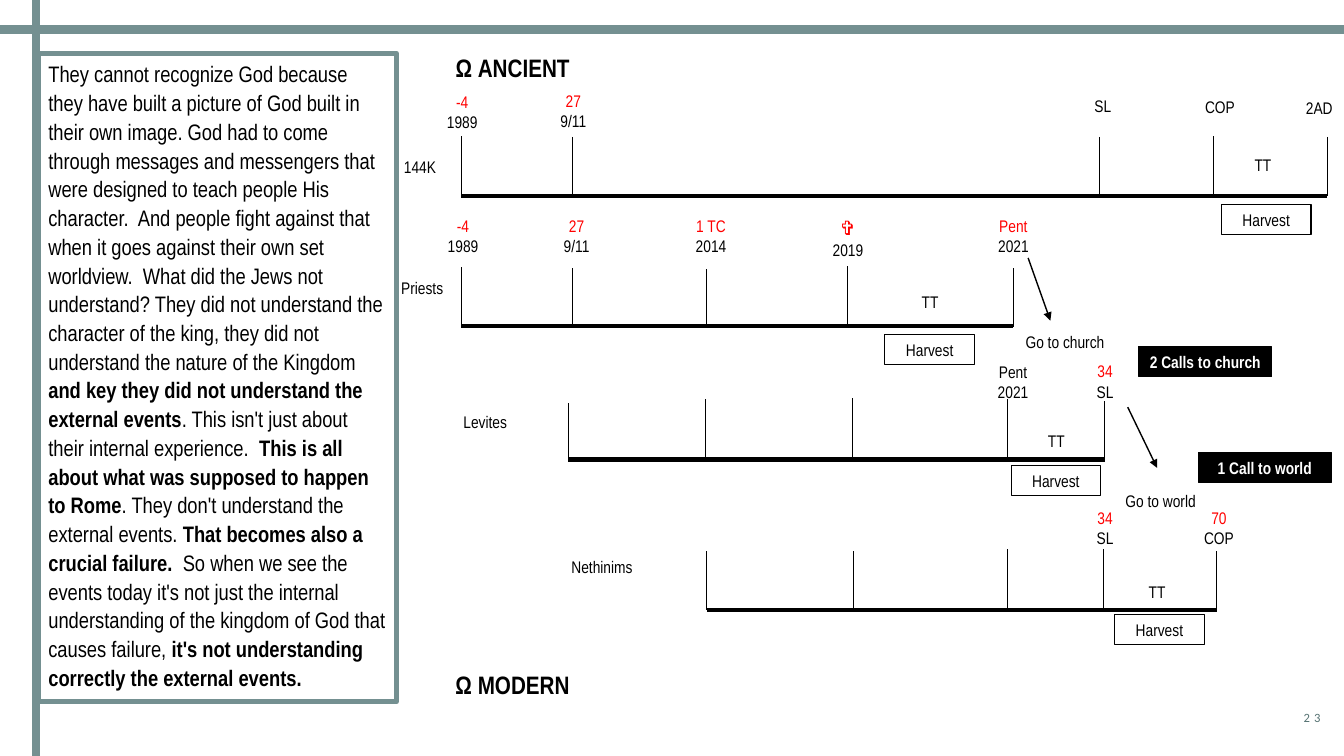
"""Build the slide that sets four harvest timelines beside a passage."""
from dataclasses import dataclass
from typing import Optional

from lxml.etree import SubElement
from pptx import Presentation
from pptx.dml.color import RGBColor
from pptx.enum.shapes import MSO_CONNECTOR, MSO_SHAPE
from pptx.enum.text import MSO_ANCHOR, MSO_AUTO_SIZE, PP_ALIGN
from pptx.oxml.ns import qn
from pptx.util import Cm, Pt


@dataclass(frozen=True)
class Theme:
    font: str = "Arial Narrow"
    number_font: str = "Calibri"
    black: RGBColor = RGBColor(0, 0, 0)
    white: RGBColor = RGBColor(255, 255, 255)
    red: RGBColor = RGBColor(255, 0, 0)
    rail: RGBColor = RGBColor(0x74, 0x90, 0x91)
    number: RGBColor = RGBColor(0x55, 0x72, 0x72)
    heading_size: int = 18
    passage_size: int = 16
    cross_size: int = 14
    label_size: int = 12
    number_size: int = 9


@dataclass(frozen=True)
class Box:
    x: float
    y: float
    w: float
    h: float = 0.76


@dataclass(frozen=True)
class Label:
    text: str
    box: Box


@dataclass(frozen=True)
class Milestone:
    mid: float
    top: float
    mark: str
    event: str
    color: RGBColor = Theme.red


@dataclass(frozen=True)
class Timeline:
    name: Label
    base: float
    ticks: tuple[tuple[float, float], ...]
    tt: tuple[float, float]
    harvest: tuple[float, float]


@dataclass(frozen=True)
class Line:
    x1: float
    y1: float
    x2: float
    y2: float
    width: float
    color: RGBColor = Theme.black
    arrow: bool = False


T = Theme()
TICK_H = 1.48
HARVEST_W = 2.26
ANCIENT = Label("Ω ANCIENT", Box(11.23, 1.19, 4.06, 1.02))
MODERN = Label("Ω MODERN", Box(11.23, 16.74, 4.06, 1.02))
PASSAGE_BOX = Box(0.97, 1.35, 9.02, 16.33)
PASSAGE = (
    ("They cannot recognize God because they have built a picture of God built in their own image. "
     "God had to come through messages and messengers that were designed to teach people His character.  "
     "And people fight against that when it goes against their own set worldview.  "
     "What did the Jews not understand? They did not understand the character of the king, "
     "they did not understand the nature of the Kingdom ", False),
    ("and key they did not understand the external events", True),
    (". This isn't just about their internal experience.  ", False),
    ("This is all about what was supposed to happen to Rome", True),
    (". They don't understand the external events. ", False),
    ("That becomes also a crucial failure.", True),
    ("  So when we see the events today it's not just the internal understanding "
     "of the kingdom of God that causes failure, ", False),
    ("it's not understanding correctly the external events.", True),
)
TIMELINES = (
    Timeline(Label("144K", Box(9.93, 3.81, 1.73)), 4.93,
             ((11.63, 3.43), (14.43, 3.45), (27.71, 3.45), (30.58, 3.43), (33.45, 3.45)),
             (31.83, 3.78), (31.91, 5.16)),
    Timeline(Label("Priests", Box(9.86, 6.88, 1.73)), 8.22,
             ((11.63, 6.73), (14.43, 6.76), (17.81, 6.78), (21.36, 6.71), (25.53, 6.76)),
             (23.44, 7.21), (23.43, 8.43)),
    Timeline(Label("Levites", Box(11.43, 10.24, 1.73)), 11.58,
             ((14.33, 10.16), (17.78, 10.06), (21.49, 10.03), (25.4, 10.06), (27.84, 10.11)),
             (26.62, 10.72), (26.61, 11.73)),
    Timeline(Label("Nethinims", Box(14.15, 13.89, 2.24)), 15.37,
             ((17.81, 13.89), (21.51, 13.89), (25.4, 13.84), (27.81, 13.84), (30.66, 13.89)),
             (29.16, 14.53), (29.22, 15.49)),
)
MILESTONES = (
    Milestone(11.65, 2.18, "-4", "1989"),
    Milestone(14.45, 2.16, "27", "9/11"),
    Milestone(11.67, 5.31, "-4", "1989"),
    Milestone(14.53, 5.31, "27", "9/11"),
    Milestone(17.92, 5.31, "1 TC", "2014"),
    Milestone(21.37, 5.31, "✞", "2019"),
    Milestone(25.54, 5.31, "Pent", "2021"),
    Milestone(25.53, 8.99, "Pent", "2021", T.black),
    Milestone(27.85, 8.97, "34", "SL"),
    Milestone(27.85, 12.67, "34", "SL"),
    Milestone(30.72, 12.67, "70", "COP"),
)
EVENTS = (
    Label("SL", Box(27.33, 2.29, 1.12)),
    Label("COP", Box(30.12, 2.31, 1.3)),
    Label("2AD", Box(32.66, 2.34, 1.45)),
)
CAPTIONS = (
    Label("Go to church", Box(25.59, 8.23, 2.5)),
    Label("Go to world", Box(28.1, 12.24, 2.3)),
)
BADGES = (
    Label("2 Calls to church", Box(28.7, 8.74, 3.35)),
    Label("1 Call to world", Box(30.2, 11.4, 3.35)),
)
LINES = (
    Line(0, 0.74, 33.87, 0.74, 6, T.rail),
    Line(0.91, 19.05, 0.91, 0, 6, T.rail),
    Line(25.91, 6.5, 26.47, 8.08, 1, arrow=True),
    Line(28.42, 10.26, 29.16, 11.79, 1, arrow=True),
)


def place(box: Box) -> tuple[Cm, Cm, Cm, Cm]:
    return Cm(box.x), Cm(box.y), Cm(box.w), Cm(box.h)


def style(p, size: float, color: RGBColor = T.black, bold: bool = False,
          align: PP_ALIGN = PP_ALIGN.LEFT, font: str = T.font) -> None:
    p.alignment = align
    for r in p.runs:
        r.font.name, r.font.size, r.font.bold = font, Pt(size), bold
        r.font.color.rgb = color


def frame(tf, side: float = 0.25, anchor: MSO_ANCHOR = MSO_ANCHOR.TOP) -> None:
    tf.word_wrap, tf.auto_size = True, MSO_AUTO_SIZE.NONE
    tf.margin_left = tf.margin_right = Cm(side)
    tf.margin_top = tf.margin_bottom = Cm(0.13)
    tf.vertical_anchor = anchor


def add_label(slide, label: Label, size: float = T.label_size, centred: bool = False, **look):
    tf = slide.shapes.add_textbox(*place(label.box)).text_frame
    frame(tf, 0 if centred else 0.25)
    tf.text = label.text
    for p in tf.paragraphs:
        style(p, size, align=PP_ALIGN.CENTER if centred else PP_ALIGN.LEFT, **look)
    return tf


def add_rect(slide, box: Box, line: RGBColor, width: float, fill: Optional[RGBColor] = None):
    sp = slide.shapes.add_shape(MSO_SHAPE.RECTANGLE, *place(box))
    sp.shadow.inherit = False
    sp.line.color.rgb, sp.line.width = line, Pt(width)
    if fill is None:
        sp.fill.background()
    else:
        sp.fill.solid()
        sp.fill.fore_color.rgb = fill
    return sp.text_frame


def add_tag(slide, label: Label, dark: bool = False) -> None:
    tf = add_rect(slide, label.box, T.black, 0.75, T.black if dark else None)
    frame(tf, 0, MSO_ANCHOR.MIDDLE)
    tf.text = label.text
    style(tf.paragraphs[0], T.label_size, T.white if dark else T.black, dark, PP_ALIGN.CENTER)


def add_line(slide, line: Line) -> None:
    cx = slide.shapes.add_connector(MSO_CONNECTOR.STRAIGHT, Cm(line.x1), Cm(line.y1),
                                    Cm(line.x2), Cm(line.y2))
    cx.line.color.rgb, cx.line.width = line.color, Pt(line.width)
    sp_pr = cx._element.spPr
    if line.arrow:
        SubElement(sp_pr.find(qn("a:ln")), qn("a:tailEnd"), type="triangle")
    SubElement(sp_pr, qn("a:effectLst"))


def add_milestone(slide, ms: Milestone) -> None:
    tf = add_label(slide, Label(f"{ms.mark}\n{ms.event}", Box(ms.mid - 0.7, ms.top, 1.4, 1.27)),
                   centred=True)
    cross = ms.mark == "✞"
    style(tf.paragraphs[0], T.cross_size if cross else T.label_size, ms.color, cross, PP_ALIGN.CENTER)


def add_timeline(slide, tl: Timeline) -> None:
    add_line(slide, Line(tl.ticks[0][0], tl.base, tl.ticks[-1][0], tl.base, 3))
    for x, top in tl.ticks:
        add_line(slide, Line(x, top, x, top + TICK_H, 0.75))
    add_label(slide, tl.name)
    add_label(slide, Label("TT", Box(tl.tt[0] - 0.91, tl.tt[1], 1.82)), centred=True)
    add_tag(slide, Label("Harvest", Box(tl.harvest[0] - HARVEST_W / 2, tl.harvest[1], HARVEST_W)))


def add_title(slide) -> None:
    sp = slide.shapes.title
    sp.left, sp.top, sp.width, sp.height = place(ANCIENT.box)
    frame(sp.text_frame)
    sp.text_frame.text = ANCIENT.text
    style(sp.text_frame.paragraphs[0], T.heading_size, bold=True)


def add_passage(slide) -> None:
    tf = add_rect(slide, PASSAGE_BOX, T.rail, 4)
    frame(tf)
    p = tf.paragraphs[0]
    p.line_spacing = 1.07
    for text, _ in PASSAGE:
        p.add_run().text = text
    style(p, T.passage_size)
    for r, (_, bold) in zip(p.runs, PASSAGE):
        r.font.bold = bold


def add_number(slide) -> None:
    tf = slide.shapes.add_textbox(*place(Box(31.12, 17.58, 2.41, 1.02))).text_frame
    frame(tf, anchor=MSO_ANCHOR.MIDDLE)
    tf.text = "23"
    p = tf.paragraphs[0]
    style(p, T.number_size, T.number, align=PP_ALIGN.RIGHT, font=T.number_font)
    p.runs[0].font._element.set("spc", "300")


def main() -> None:
    prs = Presentation()
    prs.slide_width, prs.slide_height = Cm(33.87), Cm(19.05)
    slide = prs.slides.add_slide(prs.slide_layouts[5])
    add_title(slide)
    add_passage(slide)
    for line in LINES:
        add_line(slide, line)
    add_number(slide)
    add_label(slide, MODERN, T.heading_size, bold=True)
    for tl in TIMELINES:
        add_timeline(slide, tl)
    for ms in MILESTONES:
        add_milestone(slide, ms)
    for label in EVENTS:
        add_label(slide, label)
    for label in CAPTIONS:
        add_label(slide, label, centred=True)
    for label in BADGES:
        add_tag(slide, label, dark=True)
    prs.save("out.pptx")


if __name__ == "__main__":
    main()
